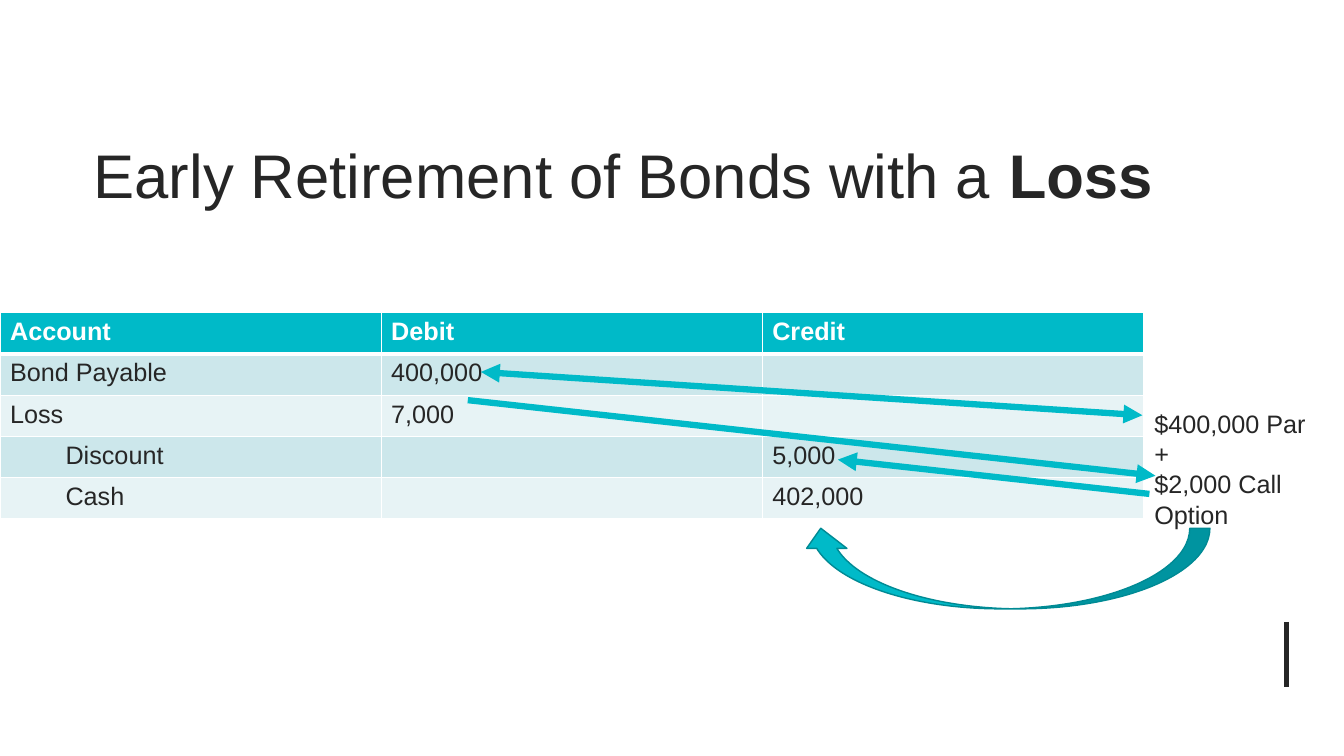
from lxml import etree
from pptx import Presentation, util as u
from pptx.dml.color import RGBColor
from pptx.enum import shapes, text
from pptx.oxml.ns import qn

# Content
TITLE = [("Early Retirement of Bonds with a ", False), ("Loss", True)]
ENTRIES = [
    ("Account", "Debit", "Credit"),
    ("Bond Payable", "400,000", ""),
    ("Loss", "7,000", ""),
    ("Discount", "", "5,000"),
    ("Cash", "", "402,000"),
]
CREDITED = ("Discount", "Cash")
NOTE = ["$400,000\u00a0Par", "+", "$2,000 Call Option"]
# Start, end, and the line ends that carry an arrowhead
ARROWS = [
    ((4.77, 3.69), (11.33, 4.12), ("headEnd", "tailEnd")),
    ((4.64, 3.97), (11.46, 4.72), ("tailEnd",)),
    ((11.4, 4.9), (8.31, 4.56), ("tailEnd",)),
]

# Format and grid
WIDTH, HEIGHT = 13.33, 7.5
TEAL, DARK_TEAL, INK, WHITE = "00BAC8", "008A94", "262626", "FFFFFF"
BANDS = ("E7F3F5", "CCE7EB")
COLUMN, ROW, TABLE_TOP = 3.78, 0.41, 3.1
TABLE_RIGHT = COLUMN * len(ENTRIES[0])
INDENT = 0.65


def color(value):
    return RGBColor.from_string(value)


def inches(*values):
    return [u.Inches(value) for value in values]


def add_run(paragraph, words, size=18, ink=INK, bold=False):
    run = paragraph.add_run()
    run.text = words
    for name, value in {"name": "Arial", "size": u.Pt(size), "bold": bold}.items():
        setattr(run.font, name, value)
    run.font.color.rgb = color(ink)


def add_text(box, paragraphs, size, anchor):
    frame = slide.shapes.add_textbox(*inches(*box)).text_frame
    for name, value in {"word_wrap": True, "vertical_anchor": anchor}.items():
        setattr(frame, name, value)
    for number, runs in enumerate(paragraphs):
        paragraph = frame.add_paragraph() if number else frame.paragraphs[0]
        for words, bold in runs:
            add_run(paragraph, words, size, bold=bold)


def add_borders(cell, widths):
    properties = cell._tc.get_or_add_tcPr()
    for position, (side, width) in enumerate(widths.items()):
        border = etree.Element(qn(f"a:ln{side}"), w=str(u.Pt(width)))
        fill = etree.SubElement(border, qn("a:solidFill"))
        etree.SubElement(fill, qn("a:srgbClr"), val=WHITE)
        properties.insert(position, border)


def add_line(start, end, ink, width, heads=()):
    connector = slide.shapes.add_connector(
        shapes.MSO_CONNECTOR.STRAIGHT, *inches(*start, *end))
    connector.line.color.rgb = color(ink)
    connector.line.width = u.Pt(width)
    properties = connector._element.spPr
    for head in heads:
        etree.SubElement(properties.find(qn("a:ln")), qn(f"a:{head}"), type="triangle")
    etree.SubElement(properties, qn("a:effectLst"))


presentation = Presentation()
presentation.slide_width, presentation.slide_height = inches(WIDTH, HEIGHT)
slide = presentation.slides.add_slide(presentation.slide_layouts[6])

# Title and corner rule
add_line((12.76, 6.17), (12.76, 6.82), INK, 3)
add_text((0.83, 0.94, 11.35, 1.57), [TITLE], 44, text.MSO_ANCHOR.MIDDLE)

# Journal entry
table = slide.shapes.add_table(
    len(ENTRIES), len(ENTRIES[0]),
    *inches(0, TABLE_TOP, TABLE_RIGHT, ROW * len(ENTRIES))).table
for column in table.columns:
    column.width = u.Inches(COLUMN)
for row, entry in enumerate(ENTRIES):
    table.rows[row].height = u.Inches(ROW)
    header = row == 0
    for column, words in enumerate(entry):
        cell = table.cell(row, column)
        cell.fill.solid()
        cell.fill.fore_color.rgb = color(TEAL if header else BANDS[row % 2])
        add_borders(cell, {"L": 1, "R": 1, "T": 3 if row == 1 else 1,
                           "B": 3 if header else 1})
        if words in CREDITED:
            cell.margin_left = u.Inches(INDENT)
        if words:
            add_run(cell.text_frame.paragraphs[0], words,
                    ink=WHITE if header else INK, bold=header)

# Cash paid, beside the table
add_text((TABLE_RIGHT + 0.01, 4, 1.75, 1.32), [[(line, False)] for line in NOTE],
         18, text.MSO_ANCHOR.TOP)

# Arrows between the amounts
for start, end, heads in ARROWS:
    add_line(start, end, TEAL, 4.5, heads)
cash_arrow = slide.shapes.add_shape(
    shapes.MSO_SHAPE.CURVED_DOWN_ARROW, *inches(7.94, 5.24, 4.06, 0.8))
cash_arrow.rotation = 180
cash_arrow.shadow.inherit = False
cash_arrow.fill.solid()
cash_arrow.fill.fore_color.rgb = color(TEAL)
cash_arrow.line.color.rgb = color(DARK_TEAL)
cash_arrow.line.width = u.Pt(1)

presentation.save("out.pptx")
